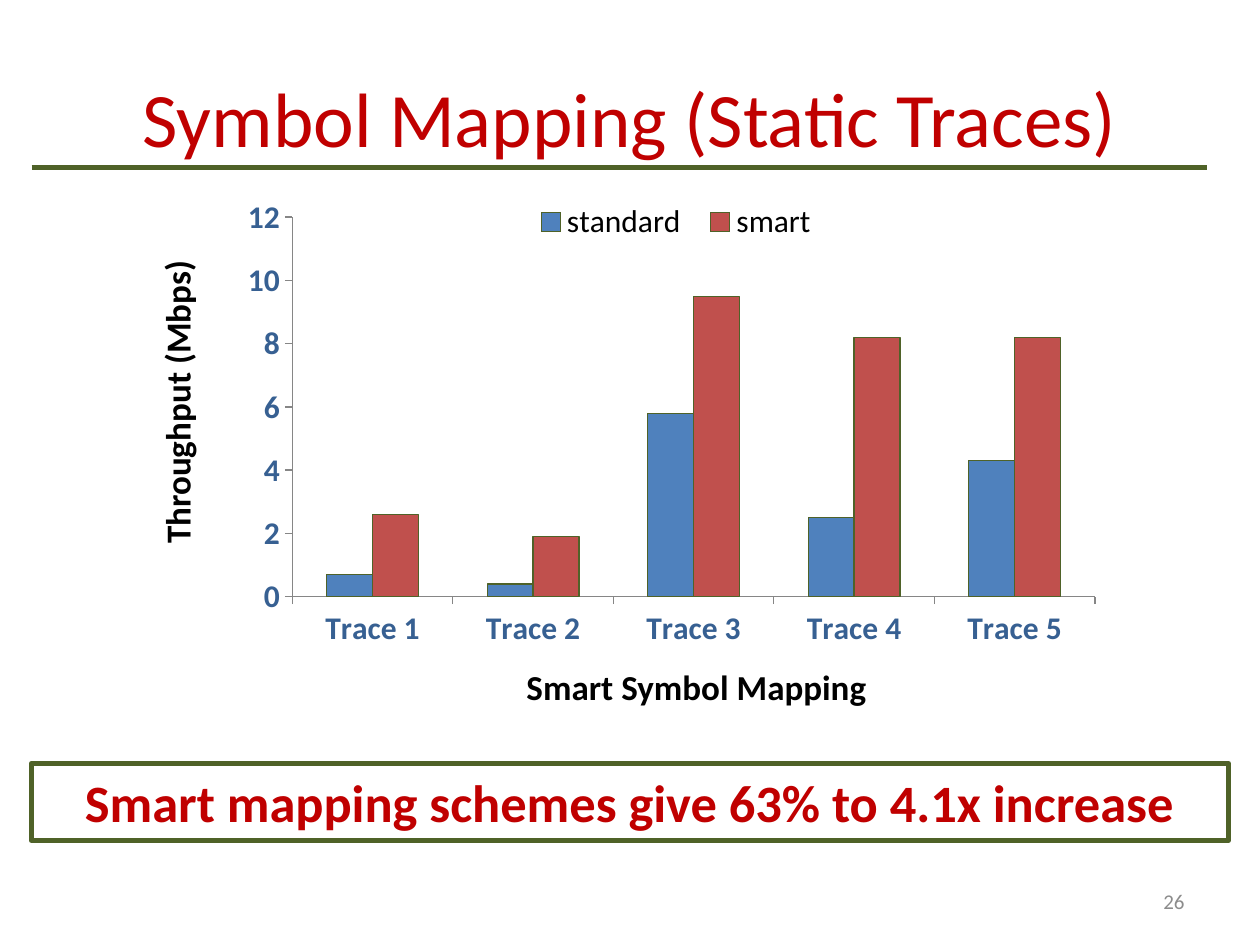
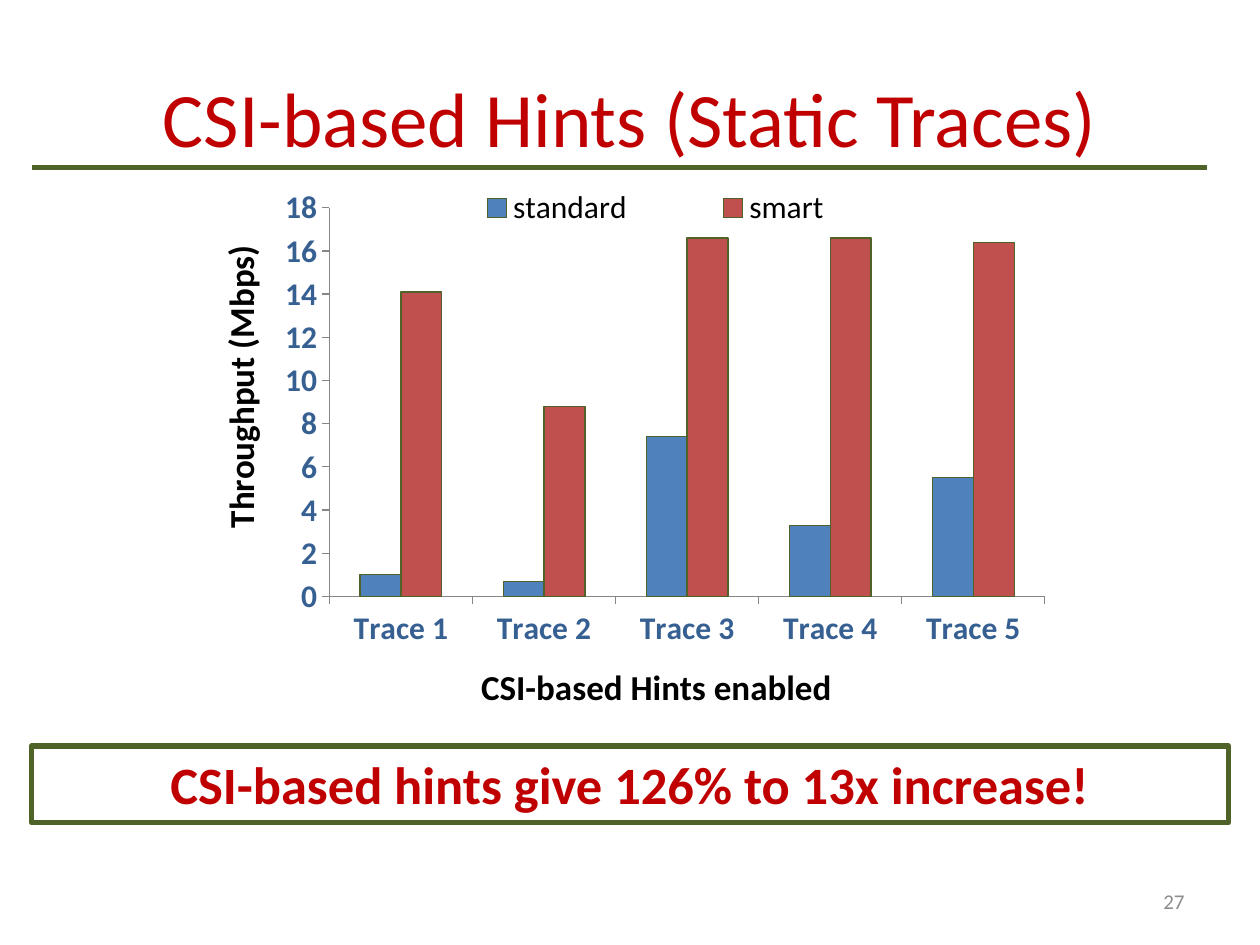
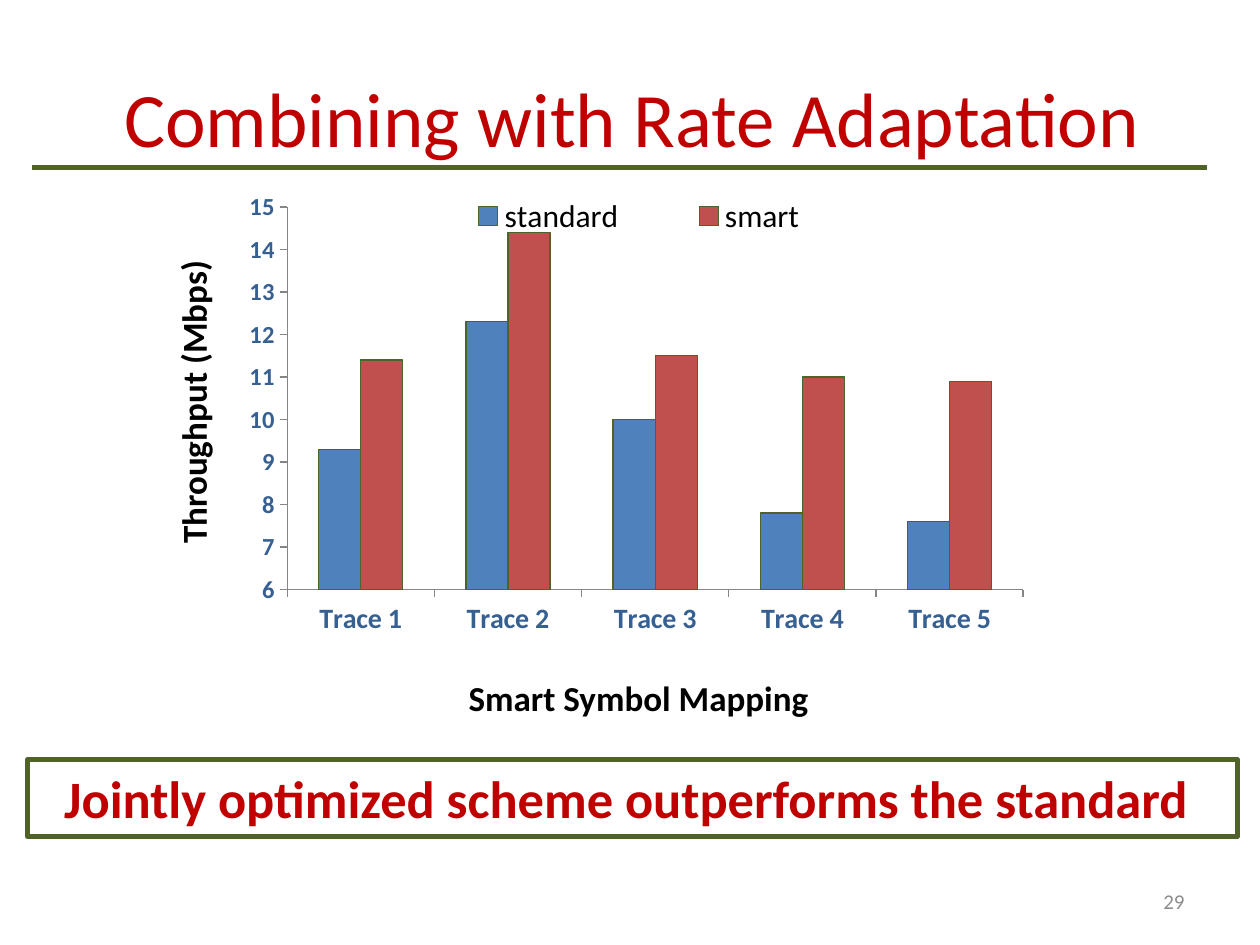
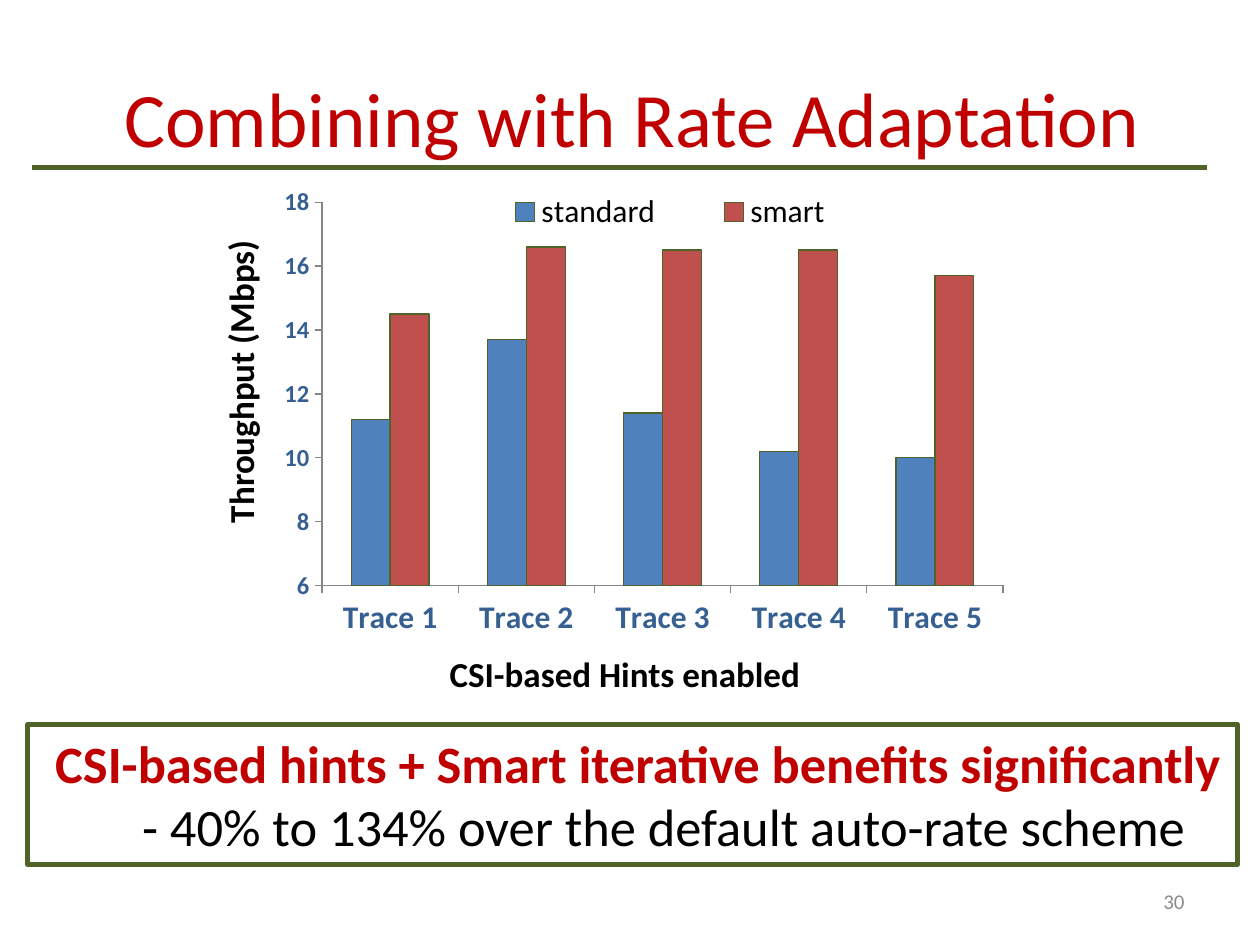
from lxml import etree
from pptx import Presentation
from pptx.chart.data import CategoryChartData
from pptx.dml.color import RGBColor
from pptx.enum.chart import XL_CHART_TYPE as ChartType, XL_LEGEND_POSITION as LegendPosition, XL_TICK_MARK as Tick
from pptx.enum.shapes import MSO_CONNECTOR as Connector, MSO_SHAPE as Shape
from pptx.enum.text import MSO_ANCHOR as Anchor, MSO_AUTO_SIZE as AutoSize, PP_ALIGN as Align
from pptx.oxml import parse_xml
from pptx.oxml.ns import nsdecls, qn
from pptx.util import Inches, Pt

# Shared look
FONT = "Calibri"
HEX = {"title": "C00000", "rule": "4F6228", "standard": "4F81BD", "smart": "C0504D",
       "labels": "376092", "ink": "000000", "axis": "868686", "number": "8C8C8C"}
COLOR = {name: RGBColor.from_string(value) for name, value in HEX.items()}
TRACES = [f"Trace {number}" for number in range(1, 6)]

deck = Presentation()
deck.slide_width, deck.slide_height = Inches(10), Inches(7.5)
CELL = deck.slide_width / 100  # grid of 100 columns by 75 rows


def write(box, lines, size, color, bold=False, align=Align.LEFT, anchor=Anchor.TOP, grow=False):
    """Fill a box with one paragraph per line, all in one style."""
    frame = box.text_frame
    frame.text = "\n".join(lines)
    frame.word_wrap = True
    frame.vertical_anchor = anchor
    frame.auto_size = AutoSize.SHAPE_TO_FIT_TEXT if grow else AutoSize.NONE
    for para in frame.paragraphs:
        para.alignment = align
        for span in para.runs:
            span.font.name, span.font.size, span.font.bold = FONT, Pt(size), bold
            span.font.color.rgb = COLOR[color]


def set_layout(parent, index, bounds, inner=False):
    """Fix a chart part's place, given as shares of the chart (x, y, w, h)."""
    for old in parent.findall(qn("c:layout")):
        parent.remove(old)
    layout = parse_xml(f"<c:layout {nsdecls('c')}><c:manualLayout/></c:layout>")
    settings = [("layoutTarget", "inner")] if inner else []
    settings += [("xMode", "edge"), ("yMode", "edge"), *zip("xywh", bounds)]
    for tag, value in settings:
        etree.SubElement(layout[0], qn(f"c:{tag}")).set("val", str(value))
    parent.insert(index, layout)


# Boxes are (left, top, width, height) in grid cells
slides = [
    {"number": 26, "title": "Symbol Mapping (Static Traces)", "title_left": 2.5,
     "chart": (18.3, 15, 70, 37.2), "plot": (.07, .06, .91, .81), "legend": (.33, .02, .35, .1),
     "standard": (.7, .4, 5.8, 2.5, 4.3), "smart": (2.6, 1.9, 9.5, 8.2, 8.2),
     "scale": (0, 12, 2), "sizes": (18, 18),
     "caption": "Smart Symbol Mapping", "caption_box": (40.8, 52.3, 29.2, 4.4),
     "unit_box": (1.6, 29.5, 24.9, 4.4), "result_box": (2.5, 60.6, 95, 6.1),
     "result": ["Smart mapping schemes give 63% to 4.1x increase"]},
    {"number": 27, "title": "CSI-based Hints (Static Traces)", "title_left": 2.5,
     "chart": (21.1, 14.2, 63.1, 38.1), "plot": (.08, .06, .9, .81), "legend": (.17, .01, .64, .1),
     "standard": (1, .7, 7.4, 3.3, 5.5), "smart": (14.1, 8.8, 16.6, 16.6, 16.4),
     "scale": (0, 18, 2), "sizes": (18, 18),
     "caption": "CSI-based Hints enabled", "caption_box": (32.5, 52.3, 39.2, 4.4),
     "unit_box": (6.4, 28, 25.4, 4.4), "result_box": (2.5, 59.2, 95, 6.1),
     "result": ["CSI-based hints give 126% to 13x increase!"]},
    {"number": 29, "title": "Combining with Rate Adaptation", "title_left": 2.7,
     "chart": (18.3, 14.6, 64.2, 36.6), "plot": (.07, .05, .91, .83), "legend": (.22, .02, .57, .1),
     "standard": (9.3, 12.3, 10, 7.8, 7.6), "smart": (11.4, 14.4, 11.5, 11, 10.9),
     "scale": (6, 15, 1), "sizes": (16, 14),
     "caption": "Smart Symbol Mapping", "caption_box": (36.2, 53.2, 29.2, 4.4),
     "unit_box": (1, 27.6, 28.7, 4.4), "result_box": (2.2, 60.3, 96, 6.1),
     "result": ["Jointly optimized scheme outperforms the standard "]},
    {"number": 30, "title": "Combining with Rate Adaptation", "title_left": 2.7,
     "chart": (21.4, 14.2, 59.4, 37.1), "plot": (.07, .05, .91, .82), "legend": (.25, .02, .57, .1),
     "standard": (11.2, 13.7, 11.4, 10.2, 10), "smart": (14.5, 16.6, 16.5, 16.5, 15.7),
     "scale": (6, 18, 2), "sizes": (18, 14),
     "caption": "CSI-based Hints enabled", "caption_box": (32.5, 51.3, 34.2, 4.4),
     "unit_box": (5.6, 26.8, 27, 4.4), "result_box": (2.2, 57.5, 96, 11.1),
     "result": [" CSI-based hints + Smart iterative benefits significantly",
                "- 40% to 134% over the default auto-rate scheme"]},
]

for item in slides:
    page = deck.slides.add_slide(deck.slide_layouts[6])
    places = {"title": (item["title_left"], 3, 95, 12.5), "number": (71.7, 69.5, 23.3, 4)}
    for name in ("chart", "caption", "unit", "result"):
        places[name] = item.get(f"{name}_box", item[name] if name == "chart" else None)
    spots = {name: [round(CELL * cells) for cells in bounds] for name, bounds in places.items()}

    # Column chart
    data = CategoryChartData()
    data.categories = TRACES
    for name in ("standard", "smart"):
        data.add_series(name, item[name])
    chart = page.shapes.add_chart(ChartType.COLUMN_CLUSTERED, *spots["chart"], data).chart
    chart.has_title = False
    chart.font.name, chart.font.size = FONT, Pt(18)
    chart.font.color.rgb = COLOR["ink"]
    plot = chart.plots[0]
    plot.gap_width, plot.overlap, plot.vary_by_categories = 150, 0, False
    for series in plot.series:
        series.format.fill.solid()
        series.format.fill.fore_color.rgb = COLOR[series.name]
        series.format.line.color.rgb = COLOR["rule"]
        series.format.line.width = Pt(.75)

    # Axes
    for axis, size in zip((chart.category_axis, chart.value_axis), item["sizes"]):
        axis.has_major_gridlines = False
        axis.major_tick_mark, axis.minor_tick_mark = Tick.OUTSIDE, Tick.NONE
        axis.format.line.color.rgb = COLOR["axis"]
        font = axis.tick_labels.font
        font.name, font.size, font.bold = FONT, Pt(size), True
        font.color.rgb = COLOR["labels"]
    values = chart.value_axis
    values.minimum_scale, values.maximum_scale, values.major_unit = item["scale"]

    # Legend and plot area
    chart.has_legend = True
    chart.legend.position = LegendPosition.TOP
    chart.legend.include_in_layout = True
    set_layout(chart.legend._element, 1, item["legend"])
    set_layout(plot._element.getparent(), 0, item["plot"], inner=True)

    # Rule under the title
    left, right, height = (round(CELL * cells) for cells in (2.5, 95.8, 13.3))
    rule = page.shapes.add_connector(Connector.STRAIGHT, left, height, right, height)
    rule.line.color.rgb = COLOR["rule"]
    rule.line.width = Pt(3)
    etree.SubElement(rule._element.spPr, qn("a:effectLst"))

    # Axis captions
    box = page.shapes.add_textbox(*spots["caption"])
    caption_align = Align.CENTER if item["caption"].startswith("CSI") else Align.LEFT
    write(box, [item["caption"]], 20, "ink", bold=True, align=caption_align, grow=True)
    box = page.shapes.add_textbox(*spots["unit"])
    box.rotation = 270
    write(box, ["Throughput (Mbps)"], 20, "ink", bold=True, grow=True)

    # Framed result
    box = page.shapes.add_shape(Shape.RECTANGLE, *spots["result"])
    box.shadow.inherit = False
    box.fill.background()
    box.line.color.rgb = COLOR["rule"]
    box.line.width = Pt(3)
    write(box, item["result"], 30, "title", bold=True, align=Align.CENTER, grow=True)
    for para in box.text_frame.paragraphs[1:]:
        para.level = 1
        para._p.get_or_add_pPr().set("marL", str(Inches(.5)))
        para.runs[0].font.bold = False
        para.runs[0].font.color.rgb = COLOR["ink"]

    # Title and slide number
    box = page.shapes.add_textbox(*spots["title"])
    write(box, [item["title"]], 44, "title", align=Align.CENTER, anchor=Anchor.MIDDLE)
    box = page.shapes.add_textbox(*spots["number"])
    write(box, [str(item["number"])], 12, "number", align=Align.RIGHT, anchor=Anchor.MIDDLE)

deck.save("out.pptx")
